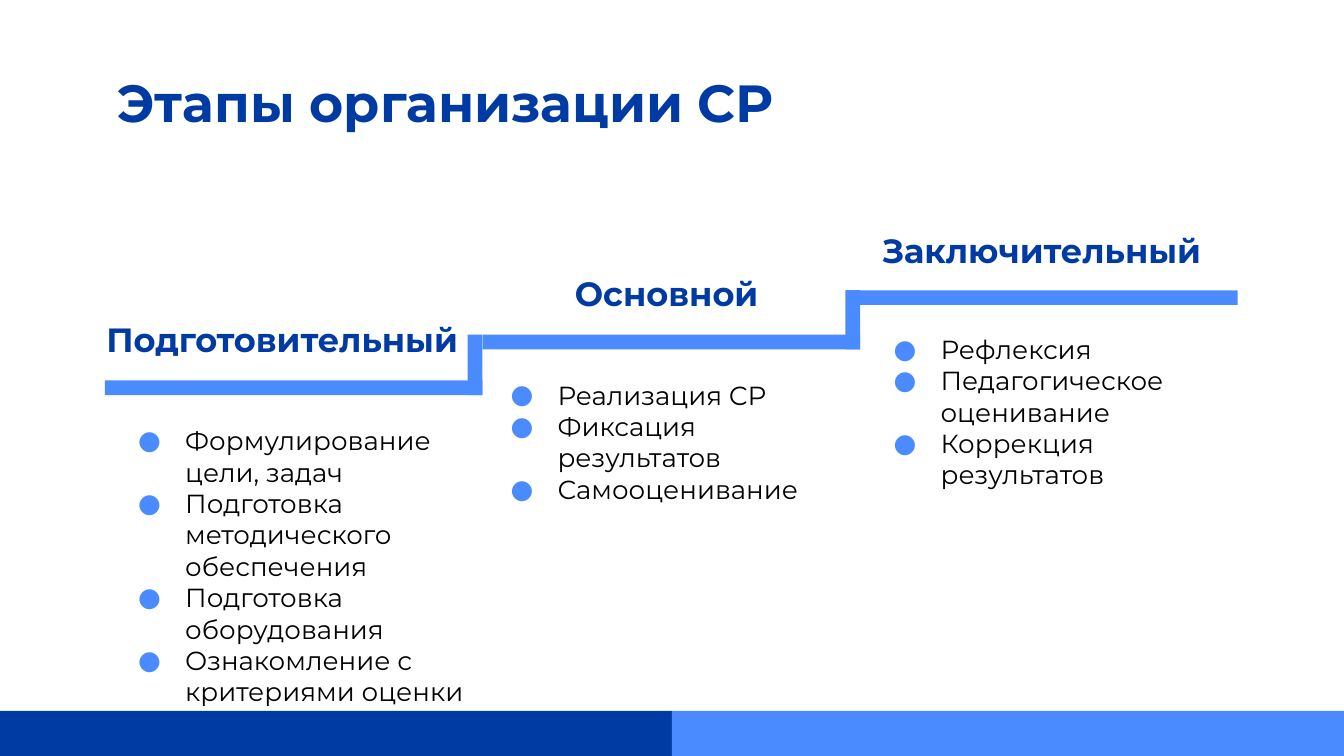
from pptx import Presentation
from pptx.dml.color import RGBColor
from pptx.enum.shapes import MSO_SHAPE
from pptx.enum.text import MSO_ANCHOR, PP_ALIGN
from pptx.oxml.ns import qn
from pptx.util import Inches, Pt
from lxml.etree import SubElement

NAVY = RGBColor(0x00, 0x3B, 0xA3)
BLUE = RGBColor(0x4A, 0x8C, 0xFF)
BLACK = RGBColor(0, 0, 0)
FONT = "Montserrat"

TITLE = "Этапы организации СР"
# heading, heading box (left, top, width), step top, list (left, top), items
STAGES = [
    ("Подготовительный", (0.68, 2.27, 2.84), 2.83, (0.78, 3.06),
     ["Формулирование цели, задач", "Подготовка методического обеспечения",
      "Подготовка оборудования", "Ознакомление с критериями оценки"]),
    ("Основной ", (4.15, 1.93, 1.69), 2.49, (3.55, 2.72),
     ["Реализация СР", "Фиксация результатов", "Самооценивание"]),
    ("Заключительный", (6.29, 1.61, 2.92), 2.16, (6.4, 2.38),
     ["Рефлексия", "Педагогическое оценивание", "Коррекция результатов"]),
]
LEFT, STEP, THICK = 0.78, 2.81, 0.11
WIDE, HIGH, FOOT = 10, 5.625, 5.29


def add_bar(slide, left, top, width, height, color):
    bar = slide.shapes.add_shape(MSO_SHAPE.RECTANGLE, Inches(left), Inches(top),
                                 Inches(width), Inches(height))
    bar.shadow.inherit = False
    bar.fill.solid()
    bar.fill.fore_color.rgb = color
    bar.line.fill.background()


def add_text(slide, box, lines, size, color, bold=False, align=PP_ALIGN.LEFT):
    frame = slide.shapes.add_textbox(*map(Inches, box)).text_frame
    frame.word_wrap = True
    frame.vertical_anchor = MSO_ANCHOR.TOP
    frame.margin_left = frame.margin_right = Inches(0.1)
    frame.margin_top = frame.margin_bottom = Inches(0.1)
    frame.text = "\n".join(lines)
    for para in frame.paragraphs:
        para.alignment = align
        for run in para.runs:
            font = run.font
            font.name, font.size, font.bold = FONT, Pt(size), bold
            font.color.rgb = color
    return frame


def add_bullet(para):
    props = para._p.get_or_add_pPr()
    props.set("marL", str(Inches(0.5)))
    props.set("indent", str(Inches(-0.35)))
    tint = SubElement(props, qn("a:buClr"))
    SubElement(tint, qn("a:srgbClr"), val=str(BLUE))
    SubElement(props, qn("a:buFont"), typeface=FONT)
    SubElement(props, qn("a:buChar"), char="●")


def main():
    deck = Presentation()
    deck.slide_width, deck.slide_height = Inches(WIDE), Inches(HIGH)
    slide = deck.slides.add_slide(deck.slide_layouts[6])

    add_text(slide, (LEFT, 0.42, 8.43, 1.02), [TITLE], 28, NAVY, bold=True)

    for i, (head, spot, top, place, items) in enumerate(STAGES):
        left = LEFT + i * STEP
        add_bar(slide, left, top, STEP, THICK, BLUE)
        if i:
            base = STAGES[i - 1][2] + THICK
            add_bar(slide, left - THICK, top, THICK, base - top, BLUE)
        add_text(slide, (*spot, 0.45), [head], 18, NAVY, bold=True,
                 align=PP_ALIGN.CENTER)
        frame = add_text(slide, (*place, STEP, 1.57), items, 14, BLACK)
        for para in frame.paragraphs:
            add_bullet(para)

    half = WIDE / 2
    for i, color in enumerate((NAVY, BLUE)):
        add_bar(slide, i * half, FOOT, half, HIGH - FOOT, color)

    deck.save("out.pptx")


if __name__ == "__main__":
    main()
